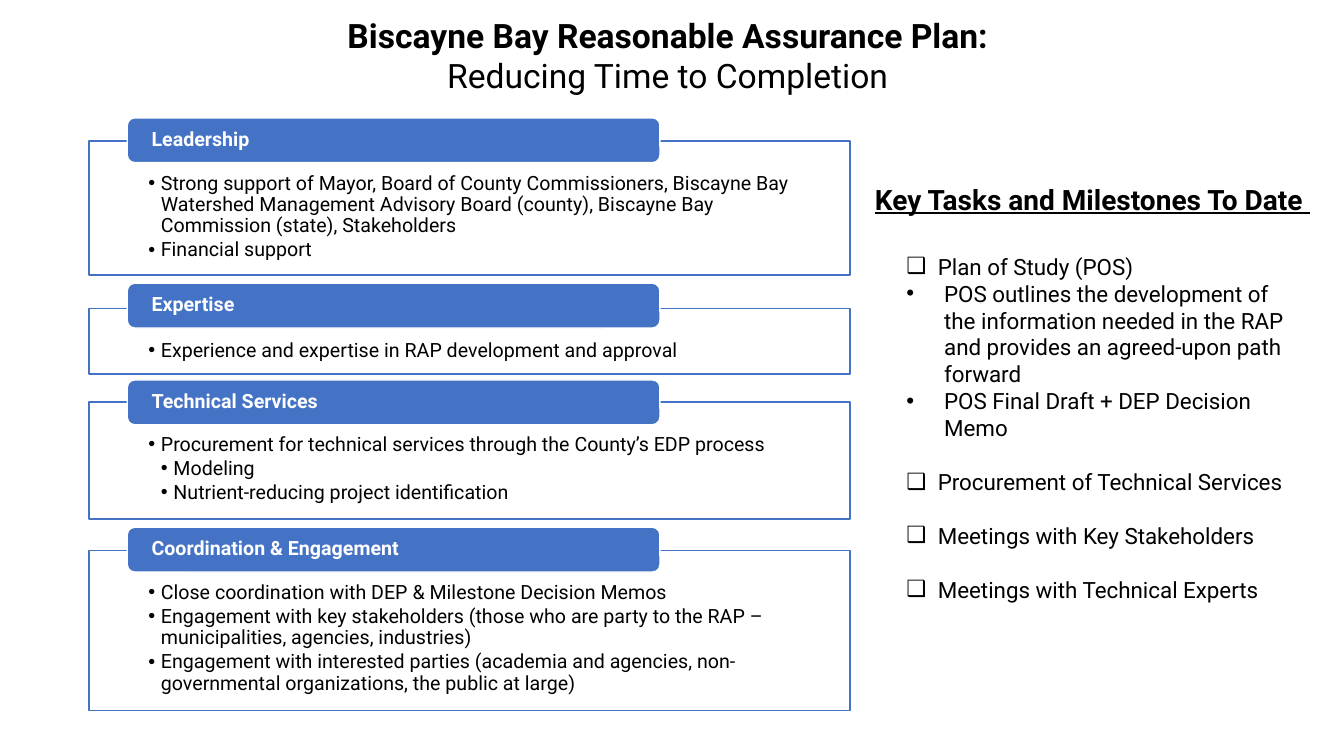
from pptx import Presentation
from pptx.util import Pt
from pptx.dml.color import RGBColor
from pptx.enum.shapes import MSO_SHAPE as Shape
from pptx.enum.text import MSO_ANCHOR as Anchor, PP_ALIGN as Align
from pptx.oxml.ns import qn
from lxml.etree import SubElement

COLORS = {"text": "000000", "paper": "FFFFFF", "accent": "4472C4"}

SECTIONS = [
    ("Leadership", 84.2, 100.8, 95.8, [
        (1, "Strong support of Mayor, Board of County Commissioners, Biscayne Bay "
            "Watershed Management Advisory Board (county), Biscayne Bay "
            "Commission (state), Stakeholders"),
        (1, "Financial support")]),
    ("Expertise", 202.3, 220.3, 46.8, [
        (1, "Experience and expertise in RAP development and approval")]),
    ("Technical Services", 271.4, 287.3, 83.5, [
        (1, "Procurement for technical services through the County’s EDP process"),
        (2, "Modeling"),
        (2, "Nutrient-reducing project identification")]),
    ("Coordination & Engagement", 376.6, 393.1, 114.5, [
        (1, "Close coordination with DEP & Milestone Decision Memos"),
        (1, "Engagement with key stakeholders (those who are party to the RAP – "
            "municipalities, agencies, industries)"),
        (1, "Engagement with interested parties (academia and agencies, "
            "non-governmental organizations, the public at large)")]),
]

TASKS = [
    ("❑", 0, "Plan of Study (POS)"),
    ("•", 0, "POS outlines the development of the information needed in the RAP "
             "and provides an agreed-upon path forward"),
    ("•", 0, "POS Final Draft + DEP Decision Memo"),
    ("❑", 19.3, "Procurement of Technical Services"),
    ("❑", 19.3, "Meetings with Key Stakeholders"),
    ("❑", 19.3, "Meetings with Technical Experts"),
]
TASK_INDENTS = {"❑": 22.5, "•": 27}


class SlideBuilder:
    font = "Roboto"

    def __init__(self, page):
        self.page = page

    def color(self, name):
        return RGBColor.from_string(COLORS[name])

    def text_box(self, left, top, width, height):
        box = self.page.shapes.add_textbox(Pt(left), Pt(top), Pt(width), Pt(height))
        box.text_frame.word_wrap = True
        return box.text_frame

    def panel(self, kind, left, top, width, height, fill, line, insets, anchor):
        box = self.page.shapes.add_shape(kind, Pt(left), Pt(top), Pt(width), Pt(height))
        box.shadow.inherit = False
        box.fill.solid()
        box.fill.fore_color.rgb = self.color(fill)
        box.line.color.rgb = self.color(line)
        box.line.width = Pt(1)
        frame = box.text_frame
        frame.word_wrap = True
        frame.vertical_anchor = anchor
        frame.margin_left = frame.margin_right = Pt(insets[0])
        frame.margin_top, frame.margin_bottom = Pt(insets[1]), Pt(insets[2])
        return frame

    def paragraph(self, frame, index, text, size, color="text", bold=False,
                  underline=False, align=Align.LEFT, level=0):
        para = frame.add_paragraph() if index else frame.paragraphs[0]
        para.text = text
        para.alignment = align
        para.level = level
        for span in para.runs:
            span.font.name = self.font
            span.font.size = Pt(size)
            span.font.bold = bold
            span.font.underline = underline
            span.font.color.rgb = self.color(color)
        return para

    def indent(self, para, margin, hanging=0, mark=None):
        props = para._p.get_or_add_pPr()
        props.set("marL", str(Pt(margin)))
        props.set("indent", str(-Pt(hanging)))
        if mark:
            SubElement(props, qn("a:buFont")).set("typeface", "Arial")
            SubElement(props, qn("a:buChar")).set("char", mark)

    def section(self, name, tab_top, top, height, items):
        body = self.panel(Shape.RECTANGLE, 63.7, top, 543.6, height,
                          "paper", "accent", (42.2, 23, 8), Anchor.TOP)
        for index, (level, text) in enumerate(items):
            para = self.paragraph(body, index, text, 14, level=level)
            self.indent(para, 9 * level, 9, "•")
            para.line_spacing = 0.9
            para.space_after = Pt(2.1)
        tab = self.panel(Shape.ROUNDED_RECTANGLE, 90.9, tab_top, 380.5, 32,
                         "accent", "paper", (15.8, 0, 0), Anchor.MIDDLE)
        self.paragraph(tab, 0, name, 14, "paper", bold=True).line_spacing = 0.9

    def task_list(self, tasks):
        frame = self.text_box(640.3, 177.1, 287.3, 334)
        for index, (mark, gap, text) in enumerate(tasks):
            para = self.paragraph(frame, index, text, 16)
            self.indent(para, TASK_INDENTS[mark], TASK_INDENTS[mark], mark)
            if gap:
                para.space_before = Pt(gap)


def main():
    deck = Presentation()
    deck.slide_width, deck.slide_height = Pt(960), Pt(540)
    page = deck.slides.add_slide(deck.slide_layouts[6])
    builder = SlideBuilder(page)

    title = builder.text_box(147.6, 7.2, 664.6, 65.5)
    builder.paragraph(title, 0, "Biscayne Bay Reasonable Assurance Plan: ", 24,
                      bold=True, align=Align.CENTER)
    builder.paragraph(title, 1, "Reducing Time to Completion ", 24, align=Align.CENTER)

    for section in SECTIONS:
        builder.section(*section)

    builder.task_list(TASKS)
    heading = builder.text_box(581.8, 126.7, 378, 42.5)
    para = builder.paragraph(heading, 0, "Key Tasks and Milestones To Date ", 20,
                             bold=True, underline=True, level=1)
    builder.indent(para, 36)

    deck.save("out.pptx")


if __name__ == "__main__":
    main()
